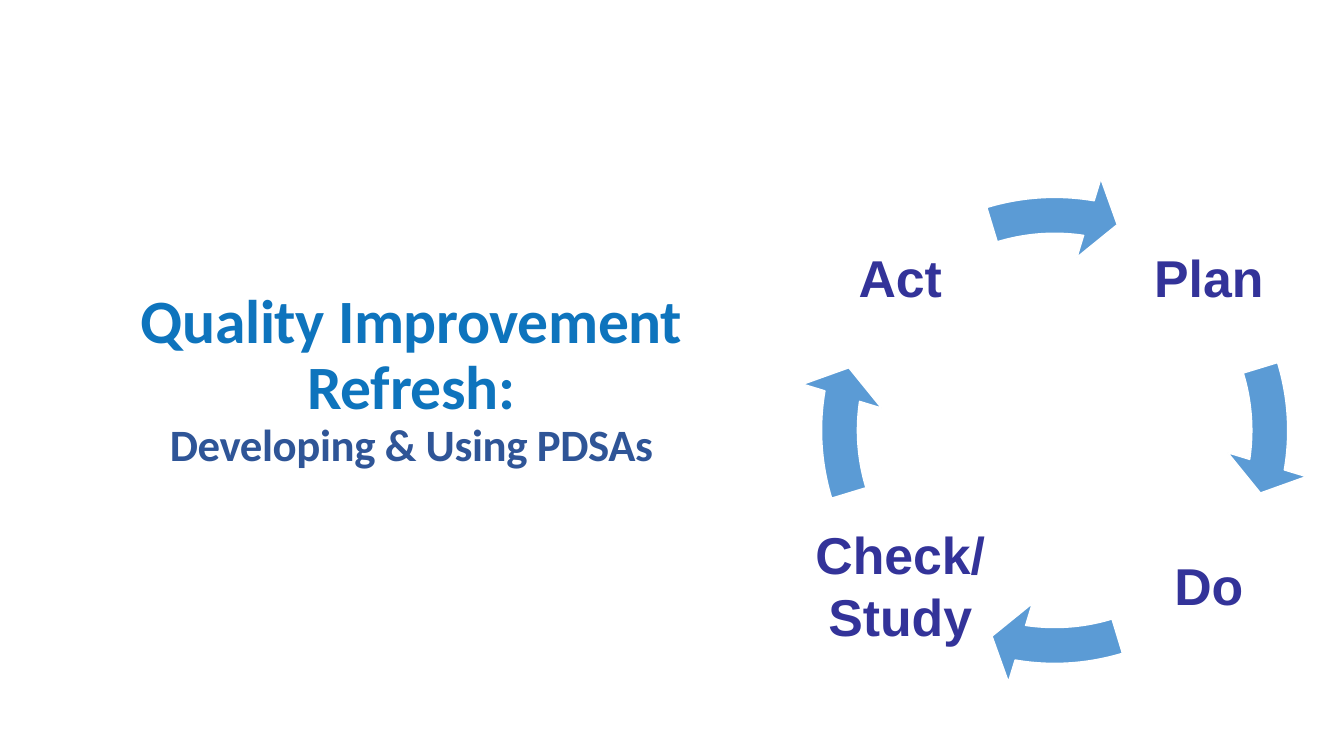
"""Build a title slide with a four-step PDSA cycle."""
from pptx import Presentation
from pptx.dml.color import RGBColor
from pptx.enum.shapes import MSO_SHAPE
from pptx.enum.text import MSO_ANCHOR, PP_ALIGN
from pptx.util import Pt

PX = 9144
ARROW = MSO_SHAPE.CIRCULAR_ARROW
MIDDLE = MSO_ANCHOR.MIDDLE
CENTER = PP_ALIGN.CENTER
WHITE = RGBColor(0xFF, 0xFF, 0xFF)
BLUE = RGBColor(0x0E, 0x74, 0xBD)
NAVY = RGBColor(0x2F, 0x55, 0x97)
INDIGO = RGBColor(0x33, 0x33, 0x99)
SKY = RGBColor(0x5B, 0x9B, 0xD5)
TURN = 216
STEP = TURN / 4


def add_box(x, y, w, h):
    frame = slide.shapes.add_textbox(x * PX, y * PX, w * PX, h * PX).text_frame
    frame.word_wrap = True
    return frame


def add_run(para, text, size, face, color):
    run = para.add_run()
    run.text = text
    run.font.size = Pt(size)
    run.font.name = face
    run.font.bold = True
    run.font.color.rgb = color
    return run


prs = Presentation()
prs.slide_width = 1333 * PX
prs.slide_height = 750 * PX
slide = prs.slides.add_slide(prs.slide_layouts[6])

title = add_box(42, 283, 732, 79).paragraphs[0]
title.alignment = CENTER
title.line_spacing = 0.9
head = add_run(title, "Quality Improvement Refresh:", 44, "Calibri", BLUE)
title.add_line_break()
sub = add_run(title, "Developing & Using PDSAs", 32, "Calibri", NAVY)
for run in (head, sub):
    run.font._element.set("spc", "-30")

steps = [
    (["Plan"], 1109, 185),
    (["Do"], 1109, 490),
    (["Check/", "Study"], 803, 490),
    (["Act"], 803, 185),
]
for i, (lines, x, y) in enumerate(steps):
    frame = add_box(x, y, 180, 180)
    frame.vertical_anchor = MIDDLE
    frame.margin_left = frame.margin_right = 5 * PX
    frame.margin_top = frame.margin_bottom = 5 * PX
    for n, line in enumerate(lines):
        para = frame.add_paragraph() if n else frame.paragraphs[0]
        para.alignment = CENTER
        add_run(para, line, 37, "Arial", INDIGO)

    arrow = slide.shapes.add_shape(ARROW, 792 * PX, 173 * PX, 508 * PX, 508 * PX)
    arrow.shadow.inherit = False
    arrow.fill.solid()
    arrow.fill.fore_color.rgb = SKY
    arrow.line.color.rgb = WHITE
    arrow.line.width = Pt(1)
    tip = 5.5 + i * STEP
    tail = (i * STEP - 10.15) % TURN
    for n, value in enumerate((0.07, 4.65, tip, tail, 0.08)):
        arrow.adjustments[n] = value

prs.save("out.pptx")
